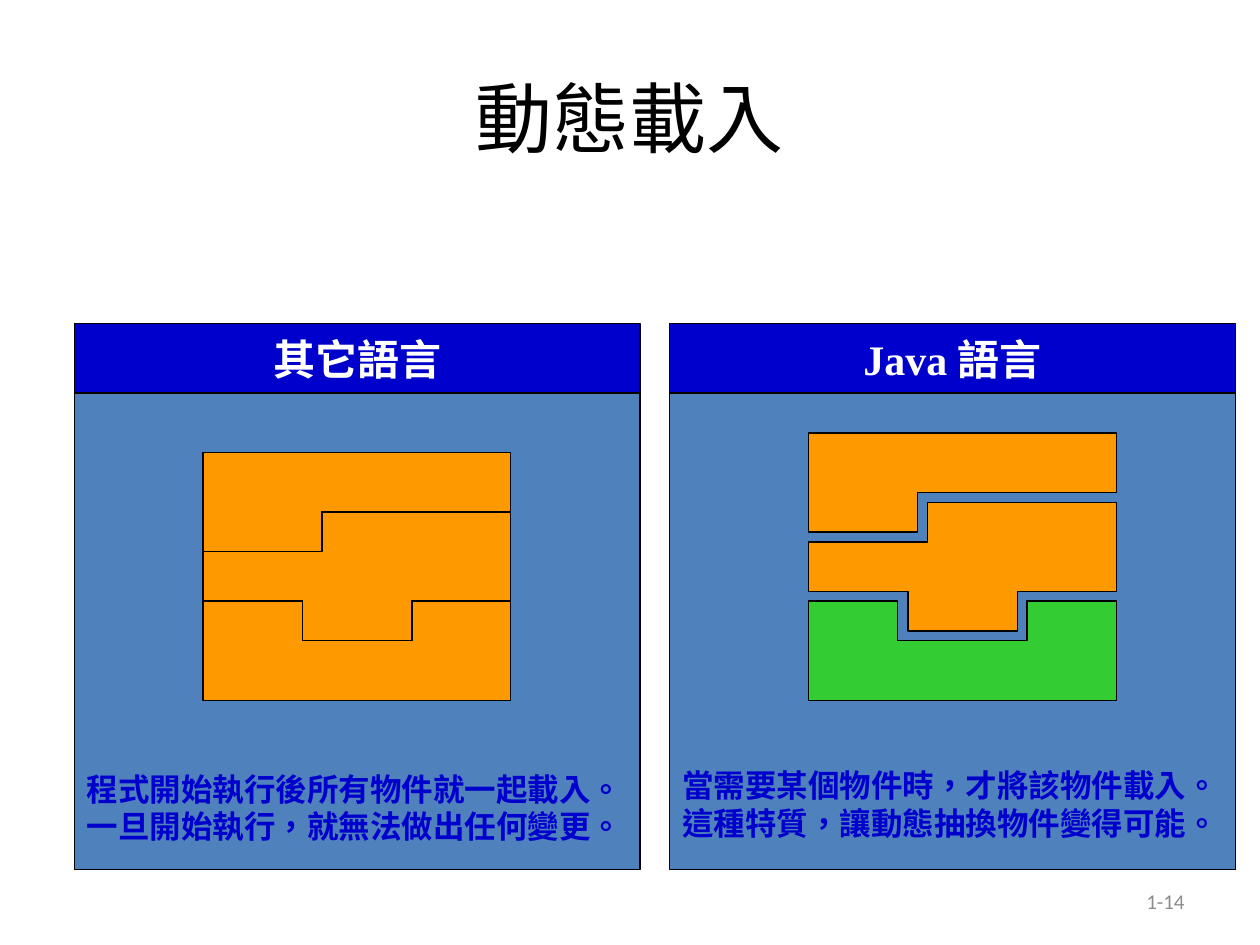
from dataclasses import dataclass

from pptx import Presentation
from pptx import util as u
from pptx.dml.color import RGBColor
from pptx.enum import lang, shapes, text

COLORS = {
    "black": "000000",
    "white": "FFFFFF",
    "navy": "0000CC",
    "blue": "4F81BD",
    "orange": "FF9900",
    "green": "33CC33",
    "gray": "8C8C8C",
}
SERIF = "Times New Roman"

# Panel geometry, in points
PANEL_TOP, PANEL_WIDTH = 185, 323.3
HEADER_HEIGHT, BODY_HEIGHT = 39.6, 272.2
NOTE_WIDTH, NOTE_HEIGHT = 320.4, 50.4
BLOCK_WIDTH = 175.7

Point = tuple[float, float]


@dataclass(frozen=True)
class Piece:
    top: float
    color: str
    outline: tuple[Point, ...]  # relative to the left edge and the top


@dataclass(frozen=True)
class Panel:
    left: float
    heading: str
    note: tuple[str, ...]
    note_top: float
    block_left: float
    pieces: tuple[Piece, ...]


def upper_piece(top: float, step_x: float) -> Piece:
    """Block whose left part hangs lower than its right part."""
    return Piece(top, "orange", (
        (0, 0), (BLOCK_WIDTH, 0), (BLOCK_WIDTH, 34), (step_x, 34),
        (step_x, 56.6), (0, 56.6)))


def middle_piece(top: float) -> Piece:
    """Block with a raised right part and a tongue below."""
    return Piece(top, "orange", (
        (0, 22.7), (68, 22.7), (68, 0), (BLOCK_WIDTH, 0),
        (BLOCK_WIDTH, 50.8), (119.2, 50.8), (119.2, 73.5),
        (56.7, 73.5), (56.7, 50.8), (0, 50.8)))


def lower_piece(color: str, notch_left: float, notch_right: float) -> Piece:
    """Block with a notch in its top edge."""
    return Piece(343.5, color, (
        (0, 0), (notch_left, 0), (notch_left, 22.7), (notch_right, 22.7),
        (notch_right, 0), (BLOCK_WIDTH, 0), (BLOCK_WIDTH, 56.8), (0, 56.8)))


PANELS = (
    Panel(42.5, "其它語言",
          ("程式開始執行後所有物件就一起載入。",
           "一旦開始執行，就無法做出任何變更。"),
          436.3, 116,
          (upper_piece(258.5, 68), middle_piece(292.5),
           lower_piece("orange", 56.7, 119.7))),
    Panel(382.7, "Java 語言",
          ("當需要某個物件時，才將該物件載入。",
           "這種特質，讓動態抽換物件變得可能。"),
          434.2, 462.2,
          (upper_piece(247.4, 62.2), middle_piece(287),
           lower_piece("green", 50.7, 124.7))),
)


def rgb(name: str) -> RGBColor:
    return RGBColor.from_string(COLORS[name])


def write(shape, *lines: str, size: float, color: str, font: str = SERIF,
          bold: bool = False, align=text.PP_ALIGN.LEFT,
          anchor=text.MSO_ANCHOR.TOP, wrap: bool = True,
          grow: bool = False) -> None:
    """Fill a shape with one paragraph per line, all in one format."""
    frame = shape.text_frame
    frame.word_wrap = wrap
    frame.vertical_anchor = anchor
    if grow:
        frame.auto_size = text.MSO_AUTO_SIZE.SHAPE_TO_FIT_TEXT
    for index, line in enumerate(lines):
        para = frame.add_paragraph() if index else frame.paragraphs[0]
        para.alignment = align
        span = para.add_run()
        span.text = line
        span.font.name = font
        span.font.size = u.Pt(size)
        span.font.bold = bold
        span.font.color.rgb = rgb(color)
        span.font.language_id = lang.MSO_LANGUAGE_ID.TRADITIONAL_CHINESE


def paint(shape, color: str) -> None:
    shape.shadow.inherit = False
    shape.fill.solid()
    shape.fill.fore_color.rgb = rgb(color)
    shape.line.color.rgb = rgb("black")
    shape.line.width = u.Pt(0.75)


def add_box(page, left: float, top: float, width: float, height: float):
    return page.shapes.add_textbox(
        u.Pt(left), u.Pt(top), u.Pt(width), u.Pt(height))


def add_rectangle(group, left: float, top: float, height: float, color: str):
    box = group.shapes.add_shape(
        shapes.MSO_SHAPE.RECTANGLE,
        u.Pt(left), u.Pt(top), u.Pt(PANEL_WIDTH), u.Pt(height))
    paint(box, color)
    return box


def add_piece(page, piece: Piece, left: float) -> None:
    start, *rest = [(u.Pt(left + x), u.Pt(piece.top + y))
                    for x, y in piece.outline]
    builder = page.shapes.build_freeform(*start)
    builder.add_line_segments(rest, close=True)
    paint(builder.convert_to_shape(), piece.color)


def add_panel(page, panel: Panel) -> None:
    # Header and body
    group = page.shapes.add_group_shape()
    header = add_rectangle(group, panel.left, PANEL_TOP, HEADER_HEIGHT, "navy")
    write(header, panel.heading, size=24, color="white", bold=True, wrap=False,
          align=text.PP_ALIGN.CENTER, anchor=text.MSO_ANCHOR.MIDDLE)
    add_rectangle(group, panel.left, PANEL_TOP + HEADER_HEIGHT,
                  BODY_HEIGHT, "blue")
    # Interlocking blocks
    for piece in panel.pieces:
        add_piece(page, piece, panel.block_left)
    # Explanation
    note = add_box(page, panel.left, panel.note_top, NOTE_WIDTH, NOTE_HEIGHT)
    write(note, *panel.note, size=18, color="navy", bold=True,
          wrap=False, grow=True)


def main() -> None:
    deck = Presentation()
    deck.slide_width, deck.slide_height = u.Pt(720), u.Pt(540)
    page = deck.slides.add_slide(deck.slide_layouts[6])

    # Title and page number
    write(add_box(page, 36, 21.6, 648, 90), "動態載入", size=44,
          color="black", font="Noto Sans Mono",
          align=text.PP_ALIGN.CENTER, anchor=text.MSO_ANCHOR.MIDDLE)
    write(add_box(page, 516, 500.5, 168, 28.8), "1-14", size=12,
          color="gray", font="Calibri",
          align=text.PP_ALIGN.RIGHT, anchor=text.MSO_ANCHOR.MIDDLE)

    for panel in PANELS:
        add_panel(page, panel)
    deck.save("out.pptx")


if __name__ == "__main__":
    main()
